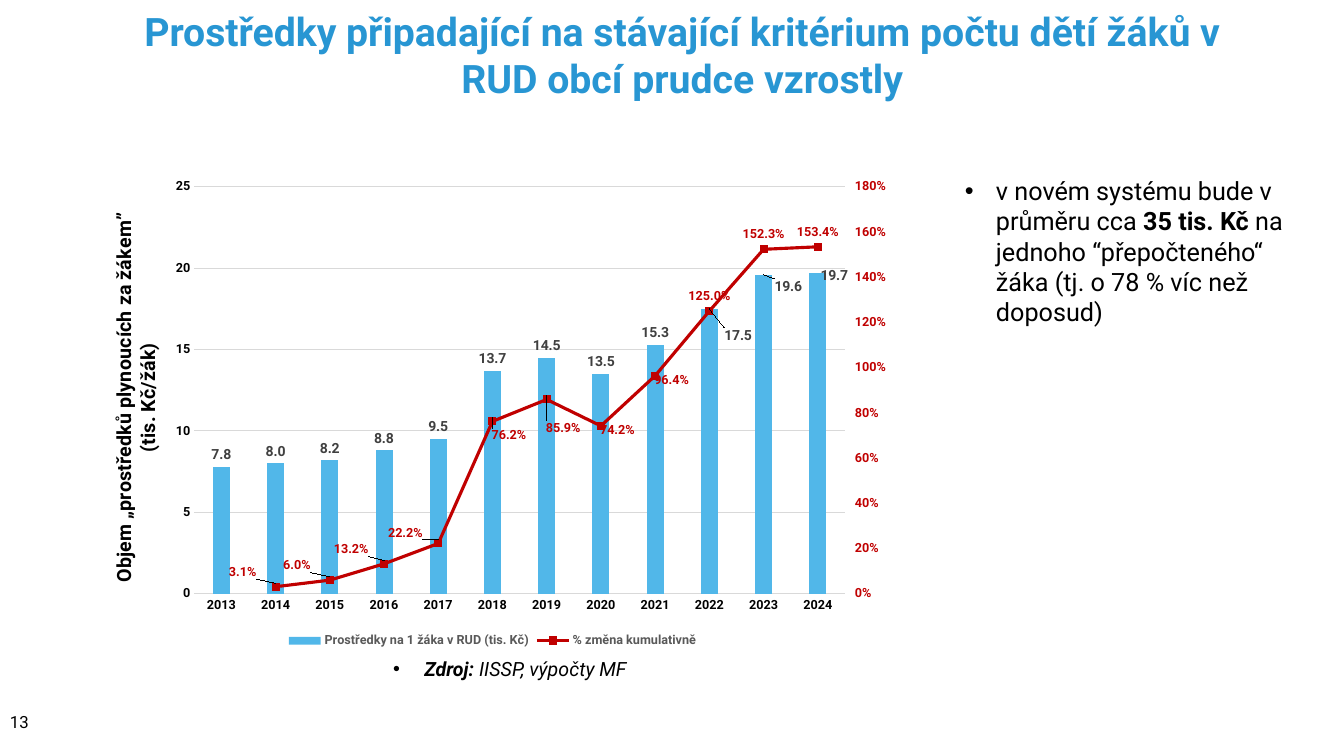
from dataclasses import dataclass

import lxml.etree
import pptx
import pptx.chart.axis
import pptx.chart.data
import pptx.dml.color
import pptx.enum.chart
import pptx.enum.text
import pptx.oxml
import pptx.oxml.ns
import pptx.util
from pptx.util import Inches

qn = pptx.oxml.ns.qn
CHART_NS = "http://schemas.openxmlformats.org/drawingml/2006/chart"
Align = pptx.enum.text.PP_ALIGN
Anchor = pptx.enum.text.MSO_ANCHOR
TickMark = pptx.enum.chart.XL_TICK_MARK
LabelPosition = pptx.enum.chart.XL_LABEL_POSITION


@dataclass(frozen=True)
class Theme:
    font: str = "Roboto"
    title: str = "2896D3"
    text: str = "000000"
    bar: str = "51B7E9"
    change: str = "C00000"
    grid: str = "D9D9D9"
    bar_label: str = "404040"
    legend: str = "595959"
    title_size: int = 28
    body_size: int = 18
    source_size: int = 14
    number_size: int = 12
    label_size: int = 10
    axis_size: int = 9


THEME = Theme()


@dataclass(frozen=True)
class Span:
    text: str
    bold: bool = False
    italic: bool = False


@dataclass(frozen=True)
class TextBlock:
    left: float
    top: float
    width: float
    height: float
    size: int
    spans: tuple[Span, ...]
    color: str = THEME.text
    align: Align = Align.LEFT
    anchor: Anchor = Anchor.TOP
    left_inset: float = 0.1
    bullet: bool = False
    wrap: bool = True


@dataclass(frozen=True)
class LabelStyle:
    color: str
    size: int
    number_format: str
    position: LabelPosition
    shifts: dict[int, tuple[float, float]]  # point index: share of chart width, height


TEXT_BLOCKS = (
    TextBlock(0.81, 0, 11.81, 1.08, THEME.title_size,
              (Span("Prostředky připadající na stávající kritérium počtu dětí žáků "
                    "v RUD obcí prudce vzrostly", bold=True),),
              color=THEME.title, align=Align.CENTER, anchor=Anchor.MIDDLE, left_inset=0.2),
    TextBlock(0, 6.95, 0.48, 0.43, THEME.number_size, (Span("13"),), anchor=Anchor.MIDDLE),
    TextBlock(3.8, 6.47, 2.53, 0.34, THEME.source_size,
              (Span("Zdroj: ", bold=True, italic=True),
               Span("IISSP, výpočty MF", italic=True)), bullet=True, wrap=False),
    TextBlock(9.47, 1.69, 3.62, 1.92, THEME.body_size,
              (Span("v novém systému bude v průměru cca "),
               Span("35 tis. Kč ", bold=True),
               Span("na jednoho “přepočteného“ žáka (tj. o 78 % víc než doposud)")),
              bullet=True),
)

YEARS = [str(year) for year in range(2013, 2025)]
FUNDS = (7.8, 8.0, 8.2, 8.8, 9.5, 13.7, 14.5, 13.5, 15.3, 17.5, 19.6, 19.7)
CHANGE = (None, 0.031, 0.06, 0.132, 0.222, 0.762, 0.859, 0.742, 0.964, 1.25, 1.523, 1.534)

FUNDS_LABELS = LabelStyle(THEME.bar_label, THEME.label_size, "0.0", LabelPosition.OUTSIDE_END,
                          {9: (0.035, 0.08), 10: (0.03, 0.05), 11: (0.02, 0.03)})
CHANGE_LABELS = LabelStyle(THEME.change, THEME.axis_size, "0.0%", LabelPosition.ABOVE,
                           {1: (-0.04, 0), 2: (-0.04, 0), 3: (-0.04, 0), 4: (-0.04, 0.01),
                            5: (0.02, 0.06), 6: (0.02, 0.09), 7: (0.02, 0.04),
                            8: (0.02, 0.04)})


def rgb(color: str) -> pptx.dml.color.RGBColor:
    return pptx.dml.color.RGBColor.from_string(color)


def style_font(font, size: int, color: str, bold: bool = False, italic: bool = False) -> None:
    font.name, font.size = THEME.font, pptx.util.Pt(size)
    font.bold, font.italic = bold, italic
    font.color.rgb = rgb(color)


def add_text(page, block: TextBlock) -> None:
    box = page.shapes.add_textbox(Inches(block.left), Inches(block.top),
                                  Inches(block.width), Inches(block.height))
    frame = box.text_frame
    frame.word_wrap = block.wrap
    frame.vertical_anchor = block.anchor
    frame.margin_left = Inches(block.left_inset)
    para = frame.paragraphs[0]
    para.alignment = block.align
    if block.bullet:
        properties = para._p.get_or_add_pPr()
        properties.set("marL", str(Inches(0.31)))
        properties.set("indent", str(-Inches(0.31)))
        lxml.etree.SubElement(properties, qn("a:buFont")).set("typeface", "Arial")
        lxml.etree.SubElement(properties, qn("a:buChar")).set("char", "•")
    for span in block.spans:
        run = para.add_run()
        run.text = span.text
        style_font(run.font, block.size, block.color, span.bold, span.italic)


def chart_xml(body: str):
    root = pptx.oxml.parse_xml(f'<c:part xmlns:c="{CHART_NS}">{body}</c:part>')
    return root[0]


def remove_children(parent, tag: str) -> None:
    for child in parent.findall(qn(tag)):
        parent.remove(child)


def manual_layout(inner: bool = False, edge: bool = True, **sizes: float):
    target = '<c:layoutTarget val="inner"/>' if inner else ""
    modes = '<c:xMode val="edge"/><c:yMode val="edge"/>' if edge else ""
    values = "".join(f'<c:{key} val="{value}"/>' for key, value in sizes.items())
    return chart_xml(f"<c:layout><c:manualLayout>{target}{modes}{values}"
                     "</c:manualLayout></c:layout>")


def style_labels(series, style: LabelStyle) -> None:
    labels = series.data_labels
    labels.show_value = True
    labels.number_format = style.number_format
    labels.number_format_is_linked = False
    labels.position = style.position
    style_font(labels.font, style.size, style.color, bold=True)
    for index, (shift_x, shift_y) in style.shifts.items():
        label = series.points[index].data_label
        style_font(label.font, style.size, style.color, bold=True)
        label.position = style.position
        element = labels._element.xpath(f'c:dLbl[c:idx/@val="{index}"]')[0]
        element.insert(1, manual_layout(edge=False, x=shift_x, y=shift_y))
        element.insert(2, chart_xml(
            f'<c:numFmt formatCode="{style.number_format}" sourceLinked="0"/>'))


def move_change_to_right_axis(chart) -> None:
    """Turn the second series into a line with its own percentage axis."""
    plot_area = chart._chartSpace.chart.plotArea
    bars = plot_area.find(qn("c:barChart"))
    change = bars.findall(qn("c:ser"))[1]
    remove_children(change, "c:invertIfNegative")
    line = chart_xml('<c:lineChart><c:grouping val="standard"/><c:varyColors val="0"/>'
                     '<c:marker val="1"/><c:axId val="5001"/><c:axId val="5002"/></c:lineChart>')
    line.insert(2, change)
    bars.addnext(line)
    right_axis = chart_xml(
        '<c:valAx><c:axId val="5002"/><c:scaling><c:orientation val="minMax"/>'
        '<c:max val="1.8"/><c:min val="0"/></c:scaling><c:delete val="0"/>'
        '<c:axPos val="r"/><c:numFmt formatCode="0%" sourceLinked="0"/>'
        '<c:majorTickMark val="out"/><c:minorTickMark val="none"/><c:tickLblPos val="nextTo"/>'
        '<c:crossAx val="5001"/><c:crosses val="max"/><c:majorUnit val="0.2"/></c:valAx>')
    hidden_axis = chart_xml(
        '<c:catAx><c:axId val="5001"/><c:scaling><c:orientation val="minMax"/></c:scaling>'
        '<c:delete val="1"/><c:axPos val="b"/><c:crossAx val="5002"/></c:catAx>')
    plot_area.find(qn("c:valAx")).addnext(right_axis)
    right_axis.addnext(hidden_axis)
    percent = pptx.chart.axis.ValueAxis(right_axis)
    style_font(percent.tick_labels.font, THEME.axis_size, THEME.change, bold=True)
    percent.format.line.fill.background()


def style_axes(chart) -> None:
    years, funds = chart.category_axis, chart.value_axis
    for axis in (years, funds):
        axis.major_tick_mark = axis.minor_tick_mark = TickMark.NONE
        style_font(axis.tick_labels.font, THEME.axis_size, THEME.text, bold=True)
    funds.minimum_scale, funds.maximum_scale, funds.major_unit = 0, 25, 5
    funds.tick_labels.number_format = "0"
    funds.tick_labels.number_format_is_linked = False
    funds.format.line.fill.background()
    for line in (years.format.line, funds.major_gridlines.format.line):
        line.color.rgb = rgb(THEME.grid)
        line.width = pptx.util.Pt(0.75)
    title = funds.axis_title
    run = title.text_frame.paragraphs[0].add_run()
    run.text = "Objem „prostředků plynoucích za žákem” (tis. Kč/žák)"
    style_font(run.font, THEME.source_size, THEME.text, bold=True)
    body = title.text_frame._txBody.bodyPr
    body.set("rot", "-5400000")
    body.set("vert", "horz")
    remove_children(title._element, "c:layout")
    title._element.find(qn("c:tx")).addnext(manual_layout(x=0.03, y=0.08))


def add_funding_chart(page) -> None:
    data = pptx.chart.data.CategoryChartData()
    data.categories = YEARS
    data.add_series("Prostředky na 1 žáka v RUD (tis. Kč)", FUNDS, "0.0")
    data.add_series("% změna kumulativně", CHANGE, "0.0%")
    chart = page.shapes.add_chart(pptx.enum.chart.XL_CHART_TYPE.COLUMN_CLUSTERED, Inches(0.81),
                                  Inches(1.69), Inches(8.15), Inches(4.78), data).chart
    style_font(chart.font, THEME.label_size, THEME.text)
    chart.has_title = False
    chart.has_legend = True
    chart.legend.position = pptx.enum.chart.XL_LEGEND_POSITION.BOTTOM
    chart.legend.include_in_layout = False
    style_font(chart.legend.font, THEME.axis_size, THEME.legend, bold=True)
    style_axes(chart)
    move_change_to_right_axis(chart)
    plot_area = chart._chartSpace.chart.plotArea
    remove_children(plot_area, "c:layout")
    plot_area.insert(0, manual_layout(inner=True, x=0.137, y=0.034, w=0.792, h=0.845))

    # Columns
    bar_plot, line_plot = chart.plots
    bar_plot.vary_by_categories = False
    bar_plot.gap_width = 219
    funds = bar_plot.series[0]
    funds.format.fill.solid()
    funds.format.fill.fore_color.rgb = rgb(THEME.bar)
    style_labels(funds, FUNDS_LABELS)

    # Line with square markers
    change = line_plot.series[0]
    change.smooth = False
    change.format.line.color.rgb = rgb(THEME.change)
    change.format.line.width = pptx.util.Pt(2.25)
    change.marker.style = pptx.enum.chart.XL_MARKER_STYLE.SQUARE
    change.marker.size = 5
    change.marker.format.fill.solid()
    change.marker.format.fill.fore_color.rgb = rgb(THEME.change)
    change.marker.format.line.color.rgb = rgb(THEME.change)
    style_labels(change, CHANGE_LABELS)


def main() -> None:
    deck = pptx.Presentation()
    deck.slide_width, deck.slide_height = Inches(13.33), Inches(7.5)
    page = deck.slides.add_slide(deck.slide_layouts[6])
    add_funding_chart(page)
    for block in TEXT_BLOCKS:
        add_text(page, block)
    deck.save("out.pptx")


if __name__ == "__main__":
    main()
